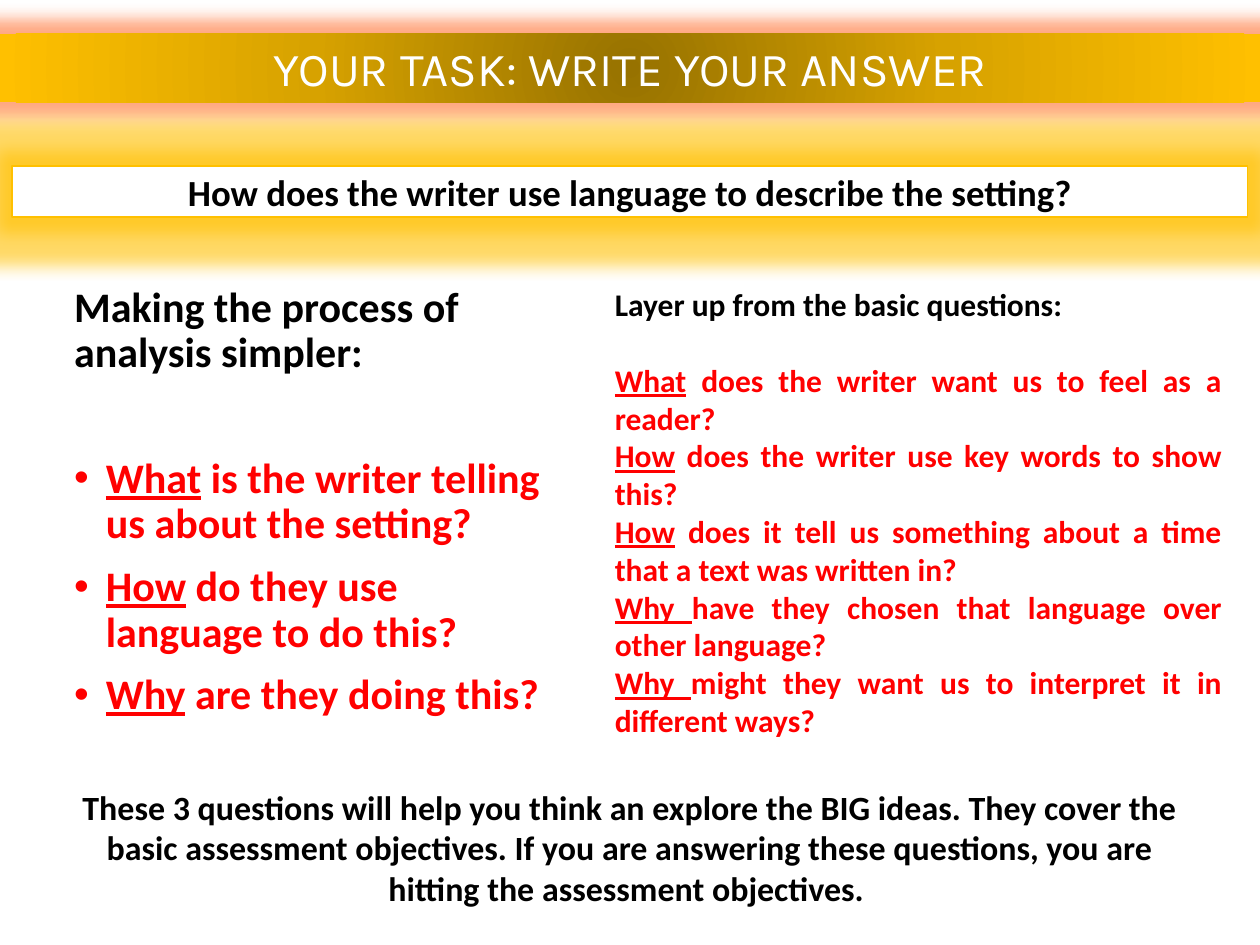
"""Builds a classroom task slide about analysing a writer's language."""
from lxml.etree import SubElement
from pptx import Presentation
from pptx.dml.color import RGBColor
from pptx.enum.shapes import MSO_SHAPE
from pptx.enum.text import MSO_ANCHOR, MSO_AUTO_SIZE, PP_ALIGN
from pptx.oxml import parse_xml
from pptx.oxml.ns import nsdecls, qn
from pptx.util import Cm, Pt

COLORS = {
    "white": "FFFFFF", "black": "000000", "red": "FF0000", "gold": "FFC000",
    "dark": "977200", "mid": "D7A200", "orange": "FF7030",
}
BANNER = {"size": Pt(27), "name": "Karla", "bold": False}
QUESTION = {"size": Pt(21), "name": "Calibri", "bold": True}
BASICS = {"size": Pt(24), "name": "Calibri", "bold": True}
LAYERS = {"size": Pt(18), "name": "Calibri", "bold": True}
SUMMARY = {"size": Pt(19.4), "name": "Calibri", "bold": True}
STEPS = [
    ("What", " is the writer telling us about the setting?"),
    ("How", " do they use language to do this?"),
    ("Why", " are they doing this?"),
]
PROMPTS = [
    ("What", " does the writer want us to feel as a reader?"),
    ("How", " does the writer use key words to show this?"),
    ("How", " does it tell us something about a time that a text was written in?"),
    ("Why ", "have they chosen that language over other language?"),
    ("Why ", "might they want us to interpret it in different ways?"),
]


def place(sp, left, top, width, height):
    """Moves and sizes a shape, in centimetres."""
    sp.left, sp.top, sp.width, sp.height = map(Cm, (left, top, width, height))


def setup_frame(sp, anchor=MSO_ANCHOR.TOP):
    """Prepares a wrapped text frame without autofit."""
    tf = sp.text_frame
    tf.word_wrap = True
    tf.auto_size = MSO_AUTO_SIZE.NONE
    tf.vertical_anchor = anchor
    return tf


def add_run(p, text, color, fmt, underline=False):
    """Adds a formatted run to a paragraph."""
    r = p.add_run()
    r.text = text
    for key, value in fmt.items():
        setattr(r.font, key, value)
    r.font.underline = underline
    r.font.color.rgb = RGBColor.from_string(COLORS[color])


def add_line(tf, fmt, lead="", text="", color="black", bullet=False, **layout):
    """Adds a paragraph with an optional underlined lead word."""
    p = tf.paragraphs[0]
    if p.runs:
        p = tf.add_paragraph()
    pPr = p._p.get_or_add_pPr()
    indent = Cm(0.64) if bullet else 0
    pPr.set("marL", str(indent))
    pPr.set("indent", str(-indent))
    if bullet:
        SubElement(pPr, qn("a:buChar")).set("char", "•")
    else:
        SubElement(pPr, qn("a:buNone"))
    for key, value in {"space_before": Pt(0), **layout}.items():
        setattr(p, key, value)
    if lead:
        add_run(p, lead, color, fmt, True)
    add_run(p, text, color, fmt)


def add_glow(sp, color, alpha):
    """Replaces the shadow of a shape with a soft glow."""
    sp.shadow.inherit = False
    effects = sp._element.spPr.find(qn("a:effectLst"))
    effects.append(parse_xml(
        f'<a:glow {nsdecls("a")} rad="{Pt(18)}"><a:srgbClr val="{COLORS[color]}">'
        f'<a:alpha val="{alpha * 1000}"/></a:srgbClr></a:glow>'))


def add_radial_fill(sp, stops):
    """Fills a shape with a gradient spreading from its centre."""
    gs = "".join(f'<a:gs pos="{pos * 1000}"><a:srgbClr val="{COLORS[color]}"/></a:gs>'
                 for pos, color in stops)
    sp._element.spPr.append(parse_xml(
        f'<a:gradFill {nsdecls("a")} rotWithShape="1"><a:gsLst>{gs}</a:gsLst>'
        '<a:path path="circle"><a:fillToRect l="50000" t="50000" r="50000" b="50000"/>'
        '</a:path></a:gradFill>'))


def build_banner(s):
    """Formats the title as a glowing gold banner."""
    sp = s.shapes.title
    place(sp, 0, 0.68, 25.4, 1.38)
    add_radial_fill(sp, [(0, "dark"), (50, "mid"), (100, "gold")])
    add_glow(sp, "orange", 60)
    add_line(setup_frame(sp, MSO_ANCHOR.MIDDLE), BANNER,
             text="YOUR TASK: WRITE YOUR ANSWER", color="white", alignment=PP_ALIGN.CENTER)


def build_question(s):
    """Adds the framed question below the banner."""
    sp = s.shapes.add_shape(MSO_SHAPE.RECTANGLE, 0, 0, 0, 0)
    place(sp, 0.25, 3.35, 24.9, 1.02)
    sp.fill.solid()
    sp.fill.fore_color.rgb = RGBColor.from_string(COLORS["white"])
    sp.line.color.rgb = RGBColor.from_string(COLORS["gold"])
    sp.line.width = Pt(1)
    add_glow(sp, "gold", 60)
    add_line(setup_frame(sp, MSO_ANCHOR.MIDDLE), QUESTION,
             text="How does the writer use language to describe the setting?",
             alignment=PP_ALIGN.CENTER)


def build_basics(sp):
    """Fills the left column with the three basic questions."""
    place(sp, 1.24, 5.64, 10.19, 6.2)
    tf = setup_frame(sp)
    add_line(tf, BASICS, text="Making the process of analysis simpler:", line_spacing=0.9)
    for i, (lead, text) in enumerate(STEPS):
        add_line(tf, BASICS, lead, text, "red", bullet=True, line_spacing=0.9,
                 space_before=Pt(10 if i else 46))


def build_layers(sp):
    """Fills the right column with the layered questions."""
    place(sp, 12.14, 5.61, 12.75, 11.02)
    tf = setup_frame(sp)
    add_line(tf, LAYERS, text="Layer up from the basic questions:",
             alignment=PP_ALIGN.JUSTIFY)
    for i, (lead, text) in enumerate(PROMPTS):
        add_line(tf, LAYERS, lead, text, "red", alignment=PP_ALIGN.JUSTIFY,
                 space_before=Pt(0 if i else 22))


def build_summary(s):
    """Adds the closing remark at the foot of the slide."""
    sp = s.shapes.add_textbox(0, 0, 0, 0)
    place(sp, 1.24, 15.85, 22.94, 2.34)
    tf = setup_frame(sp)
    for side in ("left", "top", "right", "bottom"):
        setattr(tf, f"margin_{side}", 0)
    add_line(tf, SUMMARY, alignment=PP_ALIGN.CENTER,
             text="These 3 questions will help you think an explore the BIG ideas. "
                  "They cover the basic assessment objectives. If you are answering these "
                  "questions, you are hitting the assessment objectives. ")


def main():
    """Builds and saves the slide."""
    prs = Presentation()
    prs.slide_width, prs.slide_height = Cm(25.4), Cm(19.05)
    s = prs.slides.add_slide(prs.slide_layouts[3])
    build_banner(s)
    build_question(s)
    build_basics(s.placeholders[1])
    build_layers(s.placeholders[2])
    build_summary(s)
    prs.save("out.pptx")


if __name__ == "__main__":
    main()
